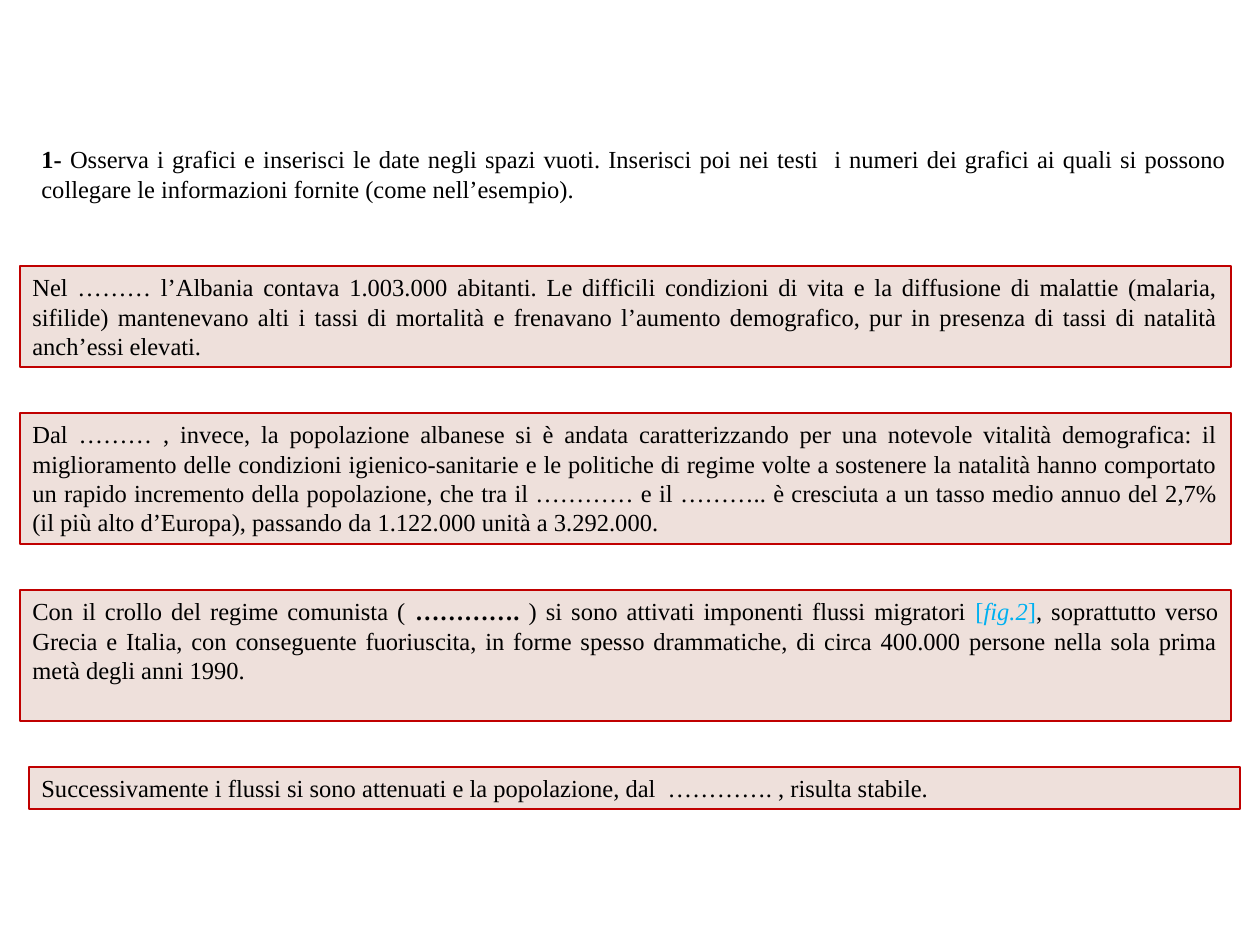
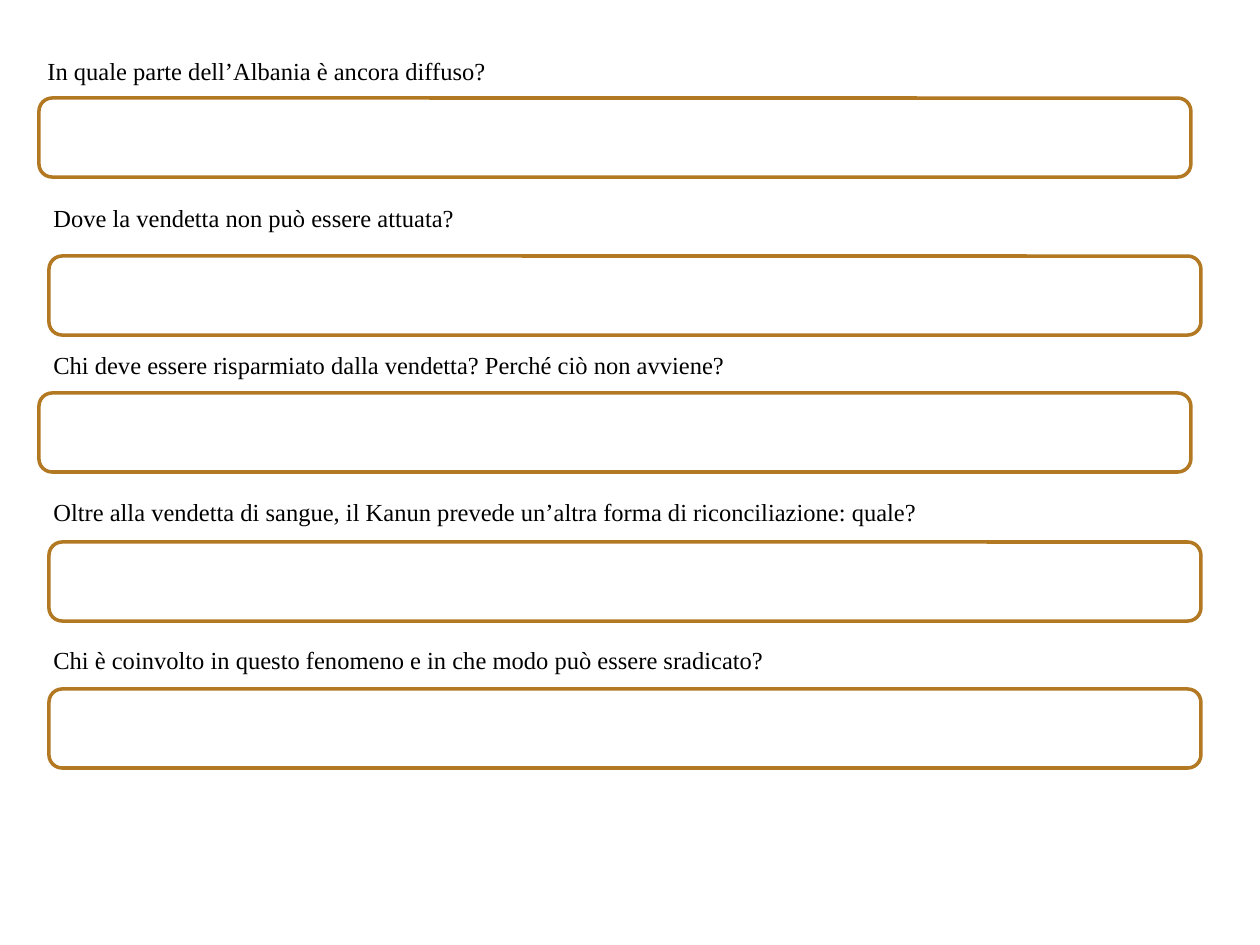
from pptx import Presentation
from pptx.dml.color import RGBColor
from pptx.enum.shapes import MSO_SHAPE
from pptx.enum.text import MSO_ANCHOR, PP_ALIGN
from pptx.util import Pt

RECT, ROUNDED = MSO_SHAPE.RECTANGLE, MSO_SHAPE.ROUNDED_RECTANGLE
TOP, JUSTIFY = MSO_ANCHOR.TOP, PP_ALIGN.JUSTIFY

BLACK = RGBColor(0x00, 0x00, 0x00)
WHITE = RGBColor(0xFF, 0xFF, 0xFF)
CYAN = RGBColor(0x00, 0xB0, 0xF0)
ROSE = RGBColor(0xEE, 0xE0, 0xDB)
RED = RGBColor(0xC0, 0x00, 0x00)
OCHRE = RGBColor(0xB2, 0x78, 0x22)

FONT = "Times New Roman"
PX = 914400 // 126

INSTRUCTION = [
    ("1- ", {"bold": True}),
    "Osserva i grafici e inserisci le date negli spazi vuoti. Inserisci poi nei testi  i numeri dei "
    "grafici ai quali si possono collegare le informazioni fornite (come nell’esempio).",
]

# left, lines of height, runs
STATEMENTS = [
    (20, 3, [
        "Nel ……… l’Albania contava 1.003.000 abitanti. Le difficili condizioni di vita e la diffusione "
        "di malattie (malaria, sifilide) mantenevano alti i tassi di mortalità e frenavano l’aumento "
        "demografico, pur in presenza di tassi di natalità anch’essi elevati.",
    ]),
    (20, 4, [
        "Dal ……… , invece, la popolazione albanese si è andata caratterizzando per una notevole vitalità "
        "demografica: il miglioramento delle condizioni igienico-sanitarie e le politiche di regime volte "
        "a sostenere la natalità hanno comportato un rapido incremento della popolazione, che tra il "
        "………… e il ……….. è cresciuta a un tasso medio annuo del 2,7% (il più alto d’Europa), passando "
        "da 1.122.000 unità a 3.292.000.",
    ]),
    (20, 4, [
        "Con il crollo del regime comunista ( ",
        ("…………. ", {"bold": True}),
        ") si sono attivati imponenti flussi migratori ",
        ("[", {"color": CYAN}),
        ("fig.2", {"color": CYAN, "italic": True}),
        ("]", {"color": CYAN}),
        ", soprattutto verso Grecia e Italia, con conseguente fuoriuscita, in forme spesso drammatiche, "
        "di circa 400.000 persone nella sola prima metà degli anni 1990.",
    ]),
    (29, 1, [
        "Successivamente i flussi si sono attenuati e la popolazione, dal  …………. , risulta stabile.",
    ]),
]

# question, question left, answer left, answer top
QUESTIONS = [
    ("In quale parte dell’Albania è ancora diffuso?", 35, 39, 98),
    ("Dove la vendetta non può essere attuata?", 41, 49, 256),
    ("Chi deve essere risparmiato dalla vendetta? Perché ciò non avviene?", 41, 39, 393),
    ("Oltre alla vendetta di sangue, il Kanun prevede un’altra forma di riconciliazione: quale?", 41, 49, 542),
    ("Chi è coinvolto in questo fenomeno e in che modo può essere sradicato?", 41, 49, 689),
]

TEXT_WIDTH = 1211
STATEMENTS_TOP, STATEMENT_GAP = 266, 46
QUESTIONS_TOP = 50
ANSWER_WIDTH, ANSWER_HEIGHT = 1152, 79


def text_height(lines):
    return 13 + lines * 59 // 2


def write(shape, runs, size=14, color=BLACK, align=JUSTIFY):
    frame = shape.text_frame
    frame.word_wrap = True
    frame.vertical_anchor = TOP
    paragraph = frame.paragraphs[0]
    paragraph.alignment = align
    for item in runs:
        words, style = (item, {}) if isinstance(item, str) else item
        run = paragraph.add_run()
        run.text = words
        run.font.name = FONT
        run.font.size = Pt(size)
        run.font.bold = style.get("bold", False)
        run.font.italic = style.get("italic", False)
        run.font.color.rgb = style.get("color", color)


def add_text(slide, left, top, lines, runs):
    box = slide.shapes.add_textbox(left * PX, top * PX, TEXT_WIDTH * PX, text_height(lines) * PX)
    write(box, runs)


def add_panel(slide, preset, left, top, width, height, fill, line, weight):
    panel = slide.shapes.add_shape(preset, left * PX, top * PX, width * PX, height * PX)
    panel.shadow.inherit = False
    panel.fill.solid()
    panel.fill.fore_color.rgb = fill
    panel.line.color.rgb = line
    panel.line.width = Pt(weight)
    return panel


def build_statements(slide):
    add_text(slide, 29, 138, 2, INSTRUCTION)
    top = STATEMENTS_TOP
    for left, lines, runs in STATEMENTS:
        height = text_height(lines)
        write(add_panel(slide, RECT, left, top, TEXT_WIDTH, height, ROSE, RED, 1.5), runs)
        top += height + STATEMENT_GAP


def build_questions(slide):
    for index, (question, left, answer_left, answer_top) in enumerate(QUESTIONS):
        add_text(slide, left, QUESTIONS_TOP + index * 589 // 4, 1, [question])
        add_panel(slide, ROUNDED, answer_left, answer_top, ANSWER_WIDTH, ANSWER_HEIGHT, WHITE, OCHRE, 2)


def main():
    deck = Presentation()
    deck.slide_width, deck.slide_height = 1260 * PX, 945 * PX
    for build in (build_statements, build_questions):
        build(deck.slides.add_slide(deck.slide_layouts[6]))
    deck.save("out.pptx")


if __name__ == "__main__":
    main()
